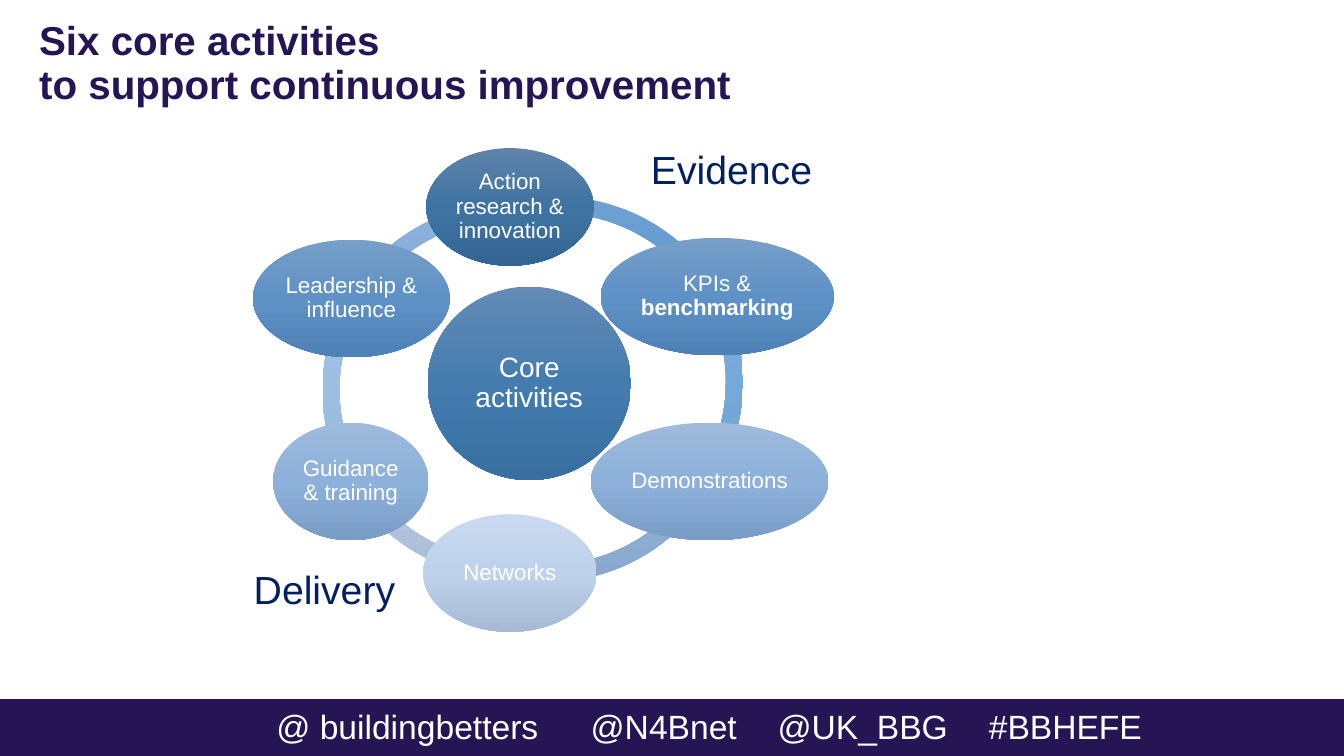
from copy import deepcopy
from dataclasses import dataclass

from lxml.etree import SubElement
from pptx import Presentation
from pptx.dml.color import RGBColor
from pptx.enum.shapes import MSO_SHAPE
from pptx.enum.text import MSO_ANCHOR, PP_ALIGN
from pptx.oxml.ns import qn
from pptx.util import Pt


@dataclass(frozen=True)
class Theme:
    font: str = "Arial"
    indigo: str = "251555"
    navy: str = "002060"
    white: str = "FFFFFF"
    title_size: float = 28.8
    side_size: float = 28
    footer_size: float = 24
    core_size: float = 20
    activity_size: float = 16
    tight: float = 0.9
    # Gradients run from top to bottom
    core: tuple = ("638BB6", "447CAF", "386FA0")
    deepest: tuple = ("5F83AA", "3F73A2", "346694")
    deep: tuple = ("779EC8", "5E91C6", "4E81B5")
    soft: tuple = ("9EBADC", "8DB1DA", "799DC6")
    palest: tuple = ("CAD9EE", "BED2EC", "A6BAD5")
    arc_deep: tuple = ("6EA0D2", "5194D1", "4184C1")
    arc_mid: tuple = ("8CB2DB", "77A8DA", "6595C7")
    arc_soft: tuple = ("ADC6E5", "9DBEE3", "88A8CE")
    arc_pale: tuple = ("CEDCEF", "C3D5ED", "AABDD6")


class SlideBuilder:
    def __init__(self, slide, theme):
        self.slide = slide
        self.theme = theme

    def shape(self, preset, left, top, width, height):
        shape = self.slide.shapes.add_shape(
            preset, Pt(left), Pt(top), Pt(width), Pt(height))
        shape.shadow.inherit = False
        shape.line.fill.background()
        return shape

    def band(self, left, top, width, height, color):
        band = self.shape(MSO_SHAPE.RECTANGLE, left, top, width, height)
        band.fill.solid()
        band.fill.fore_color.rgb = RGBColor.from_string(color)
        band.line.color.rgb = RGBColor.from_string(color)
        band.line.width = Pt(1)

    def shade(self, shape, colors):
        """Fill the shape with three evenly spaced colours, top to bottom."""
        shape.fill.gradient()
        shape.fill.gradient_angle = 270
        stop_list = shape._element.spPr.find(".//" + qn("a:gsLst"))
        stop_list.insert(1, deepcopy(stop_list[0]))
        for index, (stop, color) in enumerate(zip(shape.fill.gradient_stops, colors)):
            stop.position = index / 2
            stop.color.rgb = RGBColor.from_string(color)

    def arc(self, left, top, start, end, colors, diameter=267.84, thickness=0.045):
        """Draw a ring segment; angles are in degrees, clockwise from the right."""
        arc = self.shape(MSO_SHAPE.BLOCK_ARC, left, top, diameter, diameter)
        # Adjustments count 100000ths, angles are stored as 60000ths of a degree
        for index, value in enumerate((start * 0.6, end * 0.6, thickness)):
            arc.adjustments[index] = value
        self.shade(arc, colors)

    def style(self, paragraph, size, color, bold=None):
        paragraph.font.name = self.theme.font
        paragraph.font.size = Pt(size)
        paragraph.font.bold = bold
        paragraph.font.color.rgb = RGBColor.from_string(color)

    def bubble(self, left, top, width, height, colors, text, size, inset=1.5, strong=""):
        bubble = self.shape(MSO_SHAPE.OVAL, left, top, width, height)
        self.shade(bubble, colors)
        frame = bubble.text_frame
        frame.word_wrap = True
        frame.vertical_anchor = MSO_ANCHOR.MIDDLE
        frame.margin_left = frame.margin_right = Pt(inset)
        frame.margin_top = frame.margin_bottom = Pt(inset)
        label = frame.paragraphs[0]
        label.text = text
        label.alignment = PP_ALIGN.CENTER
        label.line_spacing = self.theme.tight
        self.style(label, size, self.theme.white)
        if strong:
            emphasis = label.add_run()
            emphasis.text = strong
            emphasis.font.bold = True

    def text(self, left, top, width, height, text, size, color, bold=None,
             anchor=MSO_ANCHOR.TOP, spacing=None, indent=7.2, tabs=()):
        box = self.slide.shapes.add_textbox(Pt(left), Pt(top), Pt(width), Pt(height))
        frame = box.text_frame
        frame.word_wrap = True
        frame.vertical_anchor = anchor
        frame.margin_left = Pt(indent)
        paragraph = frame.paragraphs[0]
        paragraph.text = text
        paragraph.line_spacing = spacing
        if tabs:
            tab_list = SubElement(paragraph._p.get_or_add_pPr(), qn("a:tabLst"))
            for position in tabs:
                SubElement(tab_list, qn("a:tab"), pos=str(Pt(position)), algn="l")
        self.style(paragraph, size, color, bold)


def main():
    theme = Theme()
    deck = Presentation()
    deck.slide_width, deck.slide_height = Pt(960), Pt(540)
    page = SlideBuilder(deck.slides.add_slide(deck.slide_layouts[6]), theme)

    page.band(0, 499.7, 961, 40.3, theme.indigo)
    handles = ("@ buildingbetters", "@N4Bnet", "@UK_BBG", "#BBHEFE")
    page.text(163.4, 501.1, 689.8, 38.9, "\t".join(handles), theme.footer_size,
              theme.white, anchor=MSO_ANCHOR.MIDDLE, spacing=theme.tight,
              indent=34, tabs=(224.5, 358, 509))

    ring = (
        (230.4, 144.7, 210, 270, theme.arc_mid),
        (230.4, 144.7, 150, 210, theme.arc_soft),
        (230.4, 144.7, 90, 150, theme.arc_pale),
        (257.8, 147.6, 28.5, 102.28, theme.arc_soft),
        (262.8, 139, 332.07, 32.8, theme.arc_mid),
        (263.5, 140.4, 255.2, 331.52, theme.arc_deep),
    )
    for segment in ring:
        page.arc(*segment)

    page.bubble(305.5, 204.7, 145.2, 138.2, theme.core, "Core\vactivities",
                theme.core_size, inset=2)
    activities = (
        (304.5, 105.8, 119.5, theme.deepest, "Action research & innovation", ""),
        (429.1, 169.9, 166.5, theme.deep, "KPIs & ", "benchmarking"),
        (422, 301.9, 169.7, theme.soft, "Demonstrations", ""),
        (302.3, 367.3, 123.8, theme.palest, "Networks", ""),
        (195.1, 301.9, 110.9, theme.soft, "Guidance & training", ""),
        (180.7, 171.2, 140.5, theme.deep, "Leadership & influence", ""),
    )
    for left, top, width, colors, name, strong in activities:
        page.bubble(left, top, width, 84, colors, name, theme.activity_size,
                    strong=strong)

    for left, top, side in ((457.9, 100.1, "Evidence"), (174.2, 400.3, "Delivery")):
        page.text(left, top, 163.4, 41, side, theme.side_size, theme.navy)
    page.text(20.9, 20.2, 698.4, 51.8,
              "Six core activities\vto support continuous improvement",
              theme.title_size, theme.indigo, bold=True,
              anchor=MSO_ANCHOR.MIDDLE, spacing=theme.tight)
    deck.save("out.pptx")


if __name__ == "__main__":
    main()
